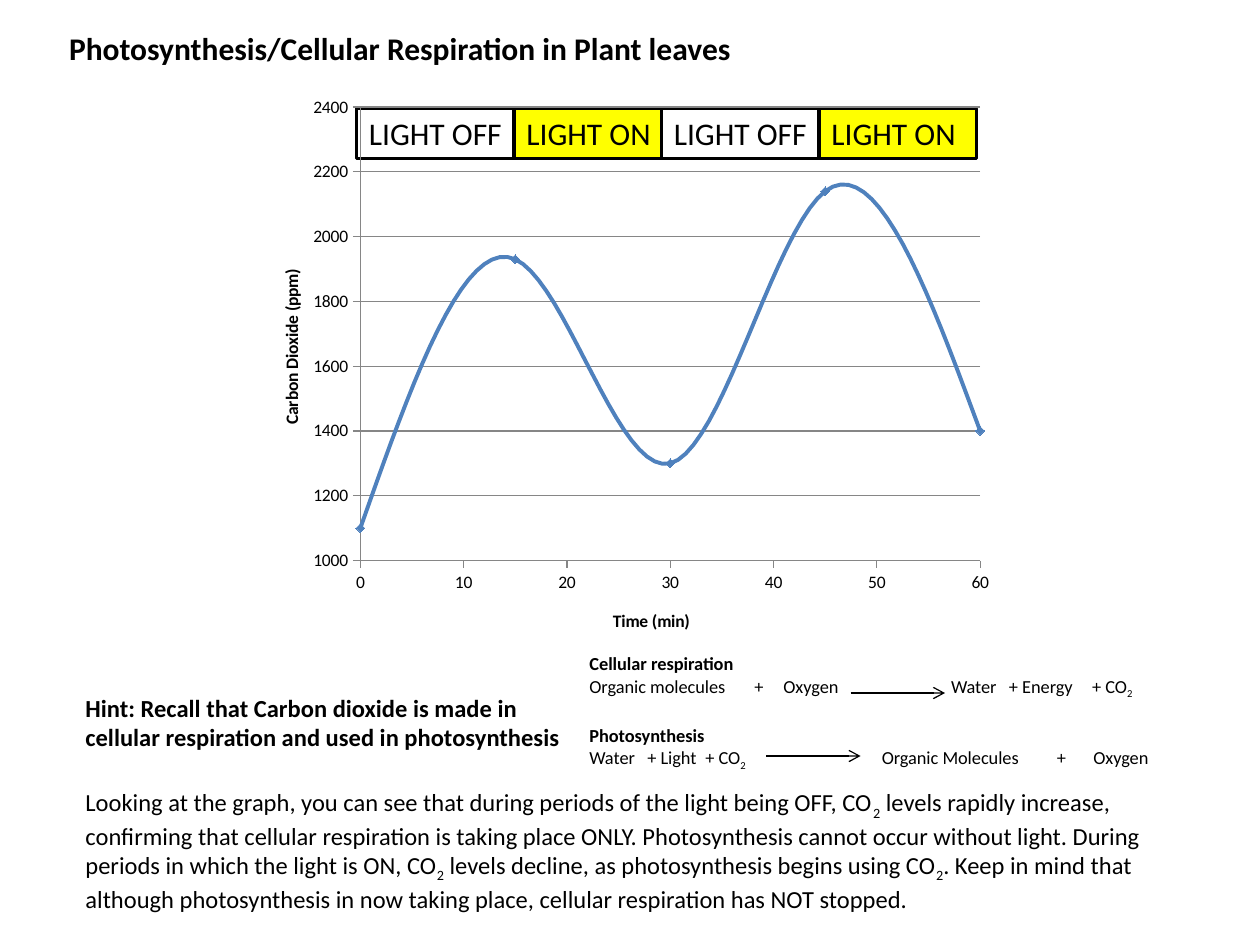
from lxml.etree import SubElement
from pptx import Presentation
from pptx.chart.data import XyChartData
from pptx.dml.color import RGBColor
from pptx.enum.chart import XL_CHART_TYPE as Kind, XL_MARKER_STYLE as Mark, XL_TICK_MARK as Tick
from pptx.enum.shapes import MSO_CONNECTOR as Link, MSO_SHAPE as Shape
from pptx.enum.text import MSO_ANCHOR as Anchor, PP_ALIGN as Align
from pptx.oxml.ns import qn
from pptx.util import Inches, Pt

BLACK, WHITE, YELLOW, BLUE, GREY = "000000", "FFFFFF", "FFFF00", "4F81BD", "868686"


def color(code):
    return RGBColor.from_string(code)


def place(node, **spots):
    layout = node.find(qn("c:layout"))
    if layout is None:
        layout = SubElement(node, qn("c:layout"))
        node.insert(0, layout)
    manual = SubElement(layout, qn("c:manualLayout"))
    if "w" in spots:
        SubElement(manual, qn("c:layoutTarget")).set("val", "inner")
    for side in "xy":
        SubElement(manual, qn(f"c:{side}Mode")).set("val", "edge")
    for side, value in spots.items():
        SubElement(manual, qn(f"c:{side}")).set("val", str(value))


class Page:
    font = "Calibri"

    def __init__(self, deck):
        self.slide = deck.slides.add_slide(deck.slide_layouts[6])
        self.shapes = self.slide.shapes

    def style(self, font, size, bold=False):
        font.name, font.size, font.bold = self.font, Pt(size), bold
        font.color.rgb = color(BLACK)

    def fill_para(self, para, text, size, bold=False):
        for i, part in enumerate(text.split("_")):
            if part:
                run = para.add_run()
                run.text = part
                self.style(run.font, size, bold)
                if i % 2:
                    run.font._element.set("baseline", "-25000")

    def text(self, box, text, size, bold=False, anchor=Anchor.TOP):
        frame = self.shapes.add_textbox(*map(Inches, box)).text_frame
        frame.word_wrap = True
        frame.vertical_anchor = anchor
        self.fill_para(frame.paragraphs[0], text, size, bold)
        return frame

    def tabs(self, para, stops):
        holder = SubElement(para._p.get_or_add_pPr(), qn("a:tabLst"))
        for stop in stops:
            tab = SubElement(holder, qn("a:tab"))
            tab.set("pos", str(Inches(stop)))
            tab.set("algn", "l")

    def label(self, box, text, fill):
        shape = self.shapes.add_shape(Shape.RECTANGLE, *map(Inches, box))
        shape.shadow.inherit = False
        shape.fill.solid()
        shape.fill.fore_color.rgb = color(fill)
        shape.line.color.rgb = color(BLACK)
        shape.line.width = Pt(2)
        frame = shape.text_frame
        frame.vertical_anchor = Anchor.TOP
        frame.word_wrap = True
        para = frame.paragraphs[0]
        para.alignment = Align.LEFT
        self.fill_para(para, text, 18)

    def arrow(self, left, top, width):
        line = self.shapes.add_connector(
            Link.STRAIGHT, Inches(left), Inches(top), Inches(left + width), Inches(top))
        line.line.color.rgb = color(BLACK)
        line.line.width = Pt(0.75)
        SubElement(line.line._get_or_add_ln(), qn("a:tailEnd")).set("type", "arrow")
        SubElement(line._element.spPr, qn("a:effectLst"))

    def axis(self, axis, title, low, high, step, spot):
        axis.minimum_scale, axis.maximum_scale, axis.major_unit = low, high, step
        axis.major_tick_mark = Tick.OUTSIDE
        axis.minor_tick_mark = Tick.NONE
        axis.format.line.color.rgb = color(GREY)
        axis.tick_labels.number_format = "General"
        axis.tick_labels.number_format_is_linked = False
        self.fill_para(axis.axis_title.text_frame.paragraphs[0], title, 10, True)
        place(axis.axis_title._element, x=spot[0], y=spot[1])

    def chart(self, box, points):
        data = XyChartData()
        series = data.add_series("Series 1")
        for x, y in points:
            series.add_data_point(x, y)
        chart = self.shapes.add_chart(Kind.XY_SCATTER_SMOOTH, *map(Inches, box), data).chart
        chart.has_legend = chart.has_title = False
        self.style(chart.font, 10)
        plot = chart.plots[0]
        plot.vary_by_categories = False
        curve = plot.series[0]
        curve._element.get_or_add_smooth().val = True
        curve.format.line.color.rgb = color(BLUE)
        curve.format.line.width = Pt(2.25)
        curve.marker.style = Mark.DIAMOND
        curve.marker.size = 5
        curve.marker.format.fill.solid()
        curve.marker.format.fill.fore_color.rgb = color(BLUE)
        curve.marker.format.line.color.rgb = color(BLUE)
        self.axis(chart.category_axis, "Time (min)", 0, 60, 10, (0.48, 0.92))
        self.axis(chart.value_axis, "Carbon Dioxide (ppm)", 1000, 2400, 200, (0.04, 0.32))
        chart.category_axis.has_major_gridlines = False
        chart.value_axis.has_major_gridlines = True
        chart.value_axis.major_gridlines.format.line.color.rgb = color(GREY)
        place(chart._chartSpace.chart.plotArea, x=0.15, y=0.04, w=0.82, h=0.8)


def main():
    deck = Presentation()
    deck.slide_width, deck.slide_height = Inches(10), Inches(7.5)
    page = Page(deck)
    page.text((0.45, -0.04, 6, 0.62), "Photosynthesis/Cellular Respiration in Plant leaves",
              18, True, Anchor.BOTTOM)

    spans = [(2.83, 1.33), (4.08, 1.3), (5.25, 1.3), (6.5, 1.25)]
    for i, (left, width) in enumerate(spans):
        text, fill = (("LIGHT OFF", WHITE), ("LIGHT ON", YELLOW))[i % 2]
        page.label((left, 0.86, width, 0.4), text, fill)
    page.chart((1.96, 0.67, 6, 4.5),
               zip(range(0, 61, 15), (1100, 1930, 1300, 2140, 1400)))

    page.text((0.58, 5.45, 3.97, 1.19),
              "Hint: Recall that Carbon dioxide is made in cellular respiration "
              "and used in photosynthesis", 14, True)

    frame = page.text((4.58, 5.17, 5.17, 1), "Cellular respiration", 10.5, True, Anchor.BOTTOM)
    lines = [
        ("Organic molecules\t+\tOxygen\tWater\t+ Energy\t+ CO_2", False,
         (1.31, 1.54, 2.87, 3.33, 3.99)),
        ("Photosynthesis", True, ()),
        ("Water\t+ Light\t+ CO_2_\tOrganic Molecules\t+\tOxygen", False,
         (0.46, 0.92, 2.32, 3.71, 4)),
    ]
    for text, bold, stops in lines:
        para = frame.add_paragraph()
        if stops:
            page.tabs(para, stops)
        else:
            para.space_before = Pt(14)
        page.fill_para(para, text, 10.5, bold)
    for left, top in ((6.75, 5.5), (6.08, 6)):
        page.arrow(left, top, 0.75)

    page.text((0.58, 6.2, 9, 1.3),
              "Looking at the graph, you can see that during periods of the light being OFF, "
              "CO_2_ levels rapidly increase, confirming that cellular respiration is taking "
              "place ONLY. Photosynthesis cannot occur without light. During periods in which "
              "the light is ON, CO_2_ levels decline, as photosynthesis begins using CO_2_. "
              "Keep in mind that although photosynthesis in now taking place, cellular "
              "respiration has NOT stopped.", 14)
    deck.save("out.pptx")


if __name__ == "__main__":
    main()
